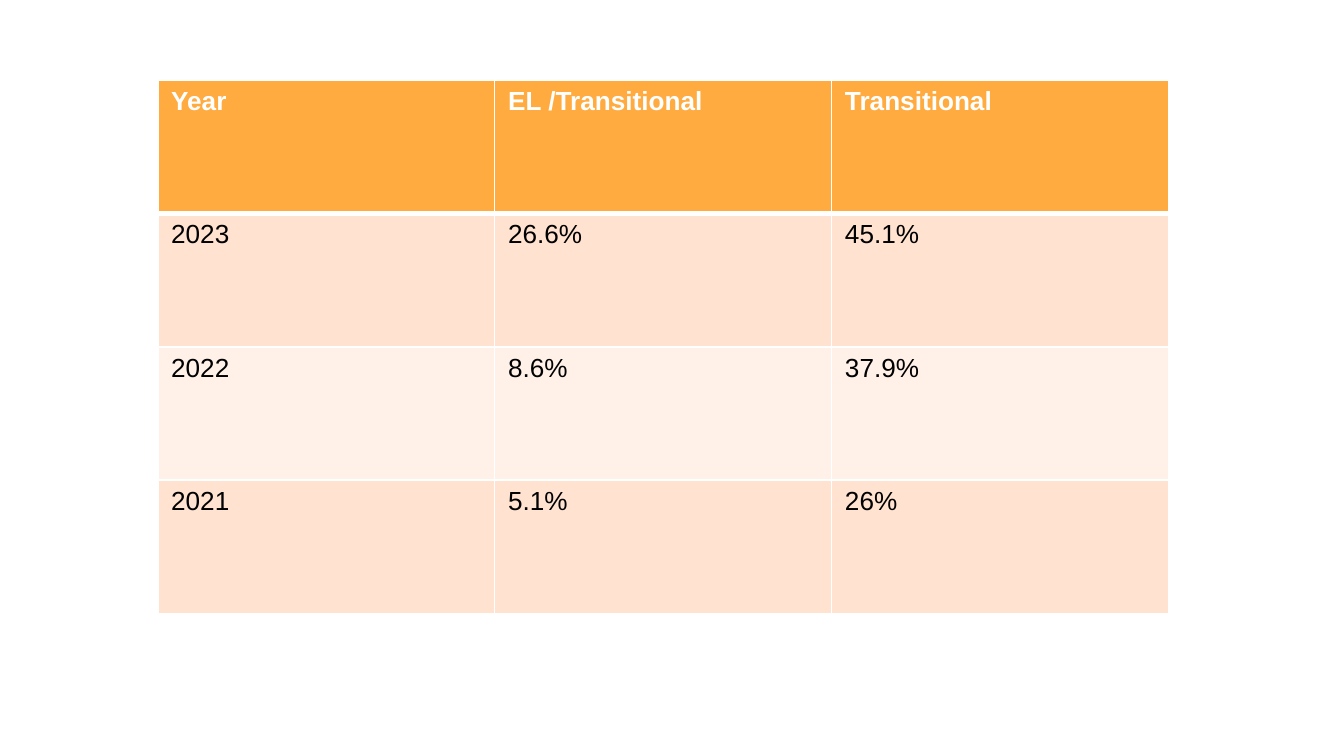
"""Build a slide with a table of yearly transitional rates."""
from lxml import etree
from pptx import Presentation
from pptx.dml.color import RGBColor
from pptx.oxml.ns import qn
from pptx.util import Pt

ROWS = [
    ("Year", "EL /Transitional", "Transitional"),
    ("2023", "26.6%", "45.1%"),
    ("2022", "8.6%", "37.9%"),
    ("2021", "5.1%", "26%"),
]
THEME = {
    "font": "Arial", "size": 14, "head": "FFAB40", "bands": ("FFF1E8", "FFE2CF"),
    "light": "FFFFFF", "dark": "000000", "thin": 1, "thick": 3,
}
SLIDE = (720, 405)
LEFT, TOP, COL, ROW = 84.5, 42.8, 180.5, 71.5


def write(frame, words, color, bold=False):
    run = frame.paragraphs[0].add_run()
    run.text = words
    font = run.font
    font.name, font.size, font.bold = THEME["font"], Pt(THEME["size"]), bold
    font.color.rgb = RGBColor.from_string(color)


def edge(cell, side, width):
    props = cell._tc.get_or_add_tcPr()
    line = etree.SubElement(props, qn("a:ln" + side), w=str(Pt(width)))
    fill = etree.SubElement(line, qn("a:solidFill"))
    etree.SubElement(fill, qn("a:srgbClr"), val=THEME["light"])


def style(cell, row):
    heavy = {"B": 0, "T": 1}
    for side in "LRTB":
        edge(cell, side, THEME["thick" if heavy.get(side) == row else "thin"])
    color = THEME["bands"][row % 2] if row else THEME["head"]
    cell.fill.solid()
    cell.fill.fore_color.rgb = RGBColor.from_string(color)


def main():
    deck = Presentation()
    deck.slide_width, deck.slide_height = map(Pt, SLIDE)
    slide = deck.slides.add_slide(deck.slide_layouts[6])
    count, span = len(ROWS), len(ROWS[0])
    table = slide.shapes.add_table(
        count, span, Pt(LEFT), Pt(TOP), Pt(COL * span), Pt(ROW * count)).table
    for row, items in enumerate(ROWS):
        for col, words in enumerate(items):
            cell = table.cell(row, col)
            style(cell, row)
            color = THEME["dark" if row else "light"]
            write(cell.text_frame, words, color, bold=row == 0)
    deck.save("out.pptx")


if __name__ == "__main__":
    main()
